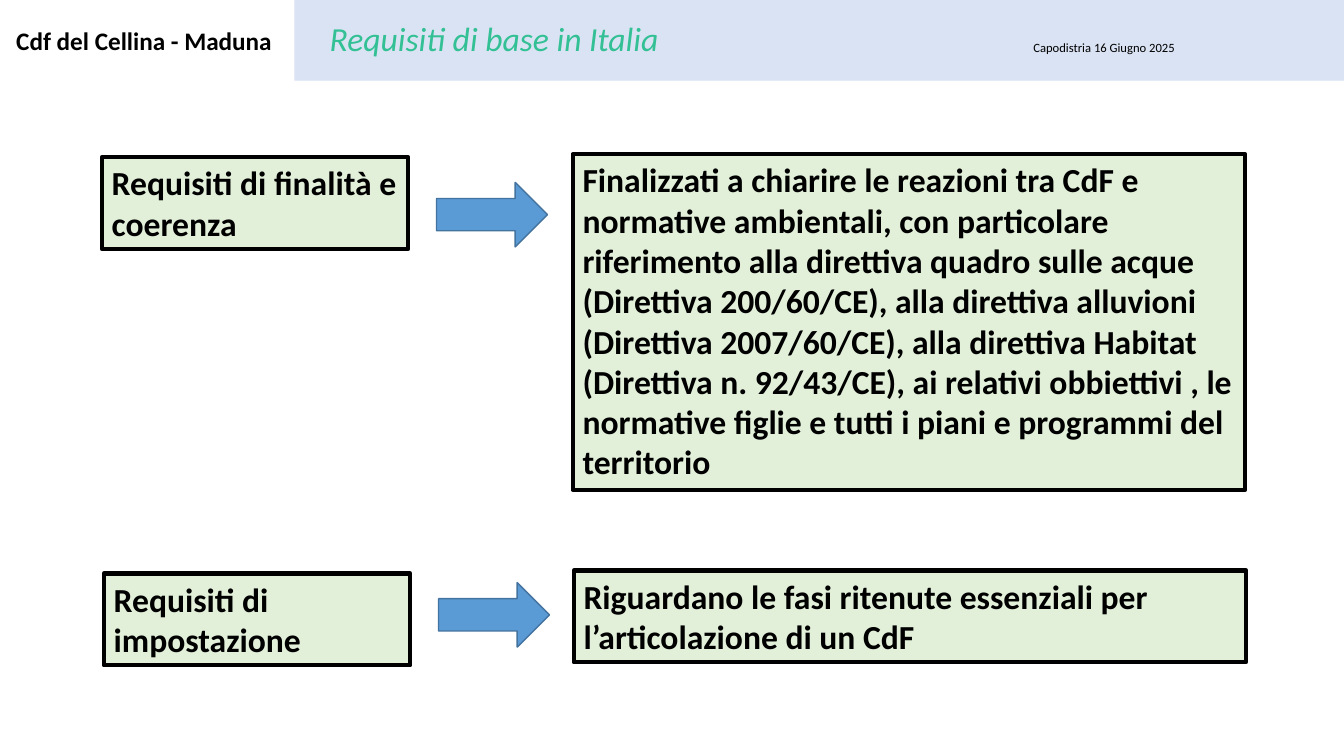
import pptx
import pptx.dml.color
import pptx.enum.shapes
import pptx.enum.text
import pptx.util

Inches = pptx.util.Inches
SHAPE = pptx.enum.shapes.MSO_SHAPE
ALIGN = pptx.enum.text.PP_ALIGN
ANCHOR = pptx.enum.text.MSO_ANCHOR
AUTO = pptx.enum.text.MSO_AUTO_SIZE

COLORS = {
    "band": "DAE3F3",
    "title": "32C094",
    "box": "E2F0D9",
    "black": "000000",
    "arrow": "5B9BD5",
    "arrow_line": "43739E",
}

ROWS = [
    (
        (1.01, 1.56, 3.04, 0.91), "Requisiti di finalità e coerenza",
        (4.33, 1.81, 1.1, 0.64),
        (5.68, 1.53, 6.67, 3.33),
        "Finalizzati a chiarire le reazioni tra CdF e normative ambientali, "
        "con particolare riferimento alla direttiva quadro sulle acque "
        "(Direttiva 200/60/CE), alla direttiva alluvioni "
        "(Direttiva 2007/60/CE), alla direttiva Habitat "
        "(Direttiva n. 92/43/CE), ai relativi obbiettivi , le normative "
        "figlie e tutti i piani e programmi del territorio",
    ),
    (
        (1.03, 5.69, 3.04, 0.91), "Requisiti di impostazione",
        (4.35, 5.78, 1.1, 0.64),
        (5.69, 5.66, 6.67, 0.91),
        "Riguardano le fasi ritenute essenziali per l’articolazione di un CdF",
    ),
]


class SlideBuilder:
    font = "Calibri"

    def __init__(self, prs):
        self.s = prs.slides.add_slide(prs.slide_layouts[5])

    def color(self, name):
        return pptx.dml.color.RGBColor.from_string(COLORS[name])

    def apply(self, target, values):
        for name, value in values.items():
            setattr(target, name, value)

    def put_text(self, sp, text, size, color="black", align=ALIGN.LEFT, font=None, frame=None):
        tf = sp.text_frame
        frame_format = {
            "word_wrap": True,
            "auto_size": AUTO.NONE,
            "vertical_anchor": ANCHOR.TOP,
            "margin_left": Inches(0.1),
            "margin_right": Inches(0.1),
            "margin_top": Inches(0.05),
            "margin_bottom": Inches(0.05),
        }
        self.apply(tf, {**frame_format, **(frame or {})})
        p = tf.paragraphs[0]
        p.alignment = align
        r = p.add_run()
        r.text = text
        font_format = {"name": self.font, "size": pptx.util.Pt(size)}
        self.apply(r.font, {**font_format, **(font or {})})
        r.font.color.rgb = self.color(color)

    def shape(self, kind, at, fill, line=None, width=1):
        sp = self.s.shapes.add_shape(kind, *map(Inches, at))
        sp.shadow.inherit = False
        sp.fill.solid()
        sp.fill.fore_color.rgb = self.color(fill)
        if line:
            sp.line.color.rgb = self.color(line)
            sp.line.width = pptx.util.Pt(width)
        else:
            sp.line.fill.background()
        return sp

    def band(self, at):
        return self.shape(SHAPE.RECTANGLE, at, "band")

    def title(self, at, text):
        sp = self.s.shapes.title
        self.apply(sp, dict(zip(("left", "top", "width", "height"), map(Inches, at))))
        self.put_text(sp, text, 24, "title", font={"italic": True},
                      frame={"vertical_anchor": ANCHOR.BOTTOM})
        sp.element.getparent().append(sp.element)

    def label(self, at, text):
        sp = self.s.shapes.add_textbox(*map(Inches, at))
        self.put_text(sp, text, 18, align=ALIGN.CENTER, font={"bold": True},
                      frame={"word_wrap": False})

    def box(self, at, text):
        sp = self.shape(SHAPE.RECTANGLE, at, "box", "black", 3)
        self.put_text(sp, text, 24, font={"bold": True})

    def arrow(self, at):
        self.shape(SHAPE.RIGHT_ARROW, at, "arrow", "arrow_line")


def main():
    prs = pptx.Presentation()
    prs.slide_width = Inches(13.33)
    prs.slide_height = Inches(7.5)
    b = SlideBuilder(prs)

    date_band = b.band((8.57, 0, 4.76, 0.8))
    b.put_text(date_band, "Capodistria 16 Giugno 2025", 9, align=ALIGN.CENTER,
               frame={"vertical_anchor": ANCHOR.MIDDLE, "margin_top": Inches(0.2)})
    b.band((2.92, 0, 5.65, 0.8))
    b.title((3.17, 0.13, 5.29, 0.5), "Requisiti di base in Italia")

    for name_at, name, arrow_at, detail_at, detail in ROWS:
        b.box(name_at, name)
        b.box(detail_at, detail)
        b.arrow(arrow_at)

    b.label((0.05, 0.2, 2.76, 0.4), "Cdf del Cellina - Maduna")
    prs.save("out.pptx")


if __name__ == "__main__":
    main()
